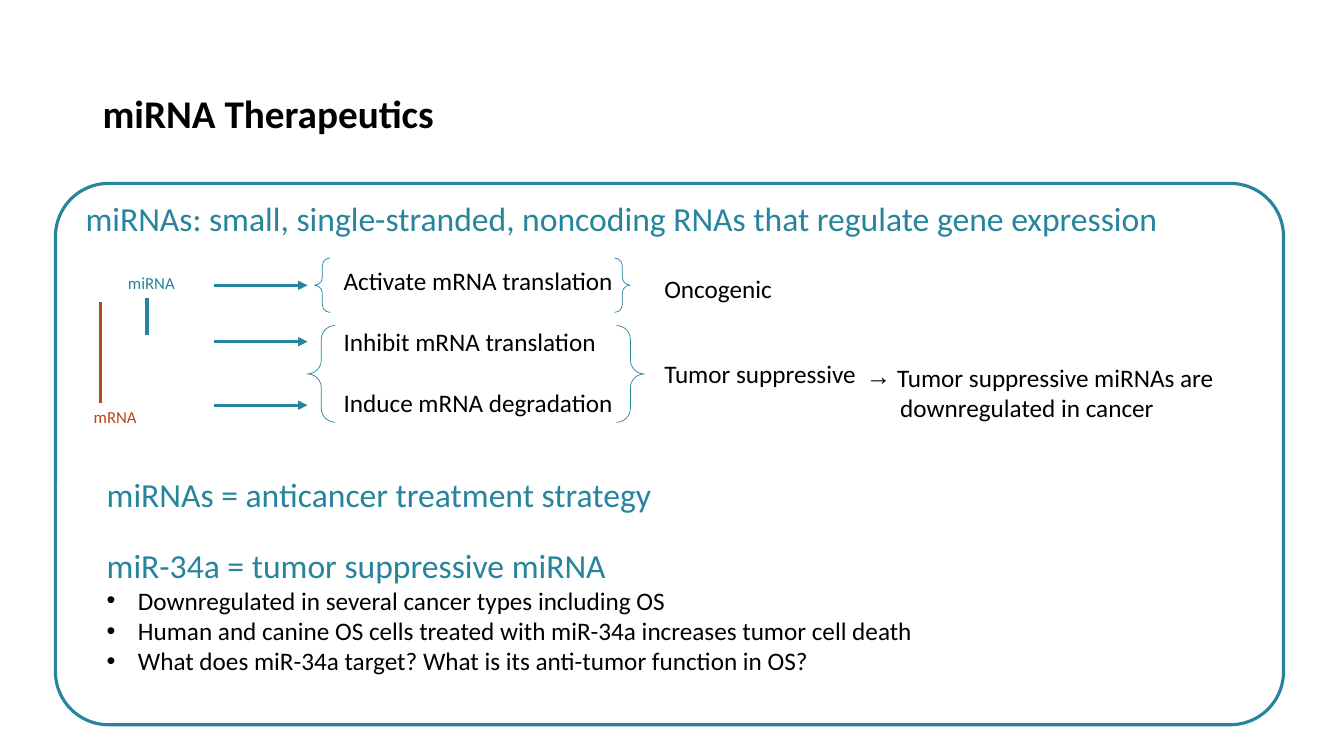
from dataclasses import dataclass

from lxml.etree import SubElement
from pptx import Presentation
from pptx.dml.color import RGBColor
from pptx.enum.shapes import MSO_CONNECTOR, MSO_SHAPE
from pptx.enum.text import MSO_ANCHOR
from pptx.oxml.ns import qn
from pptx.util import Inches, Pt

FONT = "Calibri"
TEAL = "26859D"
RUST = "B74919"
BLACK = "000000"
WHITE = "FFFFFF"
BLANK_LINE = 22
HANGING = 0.31


@dataclass
class Line:
    text: str
    size: float = 18
    color: str = BLACK
    bold: bool = False
    bullet: str = ""
    indent: float = 0
    space_before: float = 0
    line_spacing: float = 1.0


@dataclass
class TextBlock:
    left: float
    top: float
    width: float
    height: float
    lines: list[Line]
    anchor: MSO_ANCHOR = MSO_ANCHOR.TOP


@dataclass
class Outline:
    kind: MSO_SHAPE
    left: float
    top: float
    width: float
    height: float
    adjustment: float
    line_width: float
    fill: str = ""


def rgb(color: str) -> RGBColor:
    return RGBColor.from_string(color)


def set_indent(paragraph, line: Line) -> None:
    properties = paragraph._p.get_or_add_pPr()
    if line.bullet:
        properties.set("marL", str(Inches(HANGING)))
        properties.set("indent", str(-Inches(HANGING)))
        SubElement(properties, qn("a:buFont")).set("typeface", "Arial")
        SubElement(properties, qn("a:buChar")).set("char", line.bullet)
    elif line.indent:
        properties.set("marL", str(Inches(line.indent)))
        properties.set("indent", "0")


def add_text(slide, block: TextBlock) -> None:
    box = slide.shapes.add_textbox(
        Inches(block.left), Inches(block.top), Inches(block.width), Inches(block.height)
    )
    frame = box.text_frame
    frame.word_wrap = True
    frame.vertical_anchor = block.anchor
    for index, line in enumerate(block.lines):
        paragraph = frame.add_paragraph() if index else frame.paragraphs[0]
        paragraph.text = line.text
        set_indent(paragraph, line)
        paragraph.line_spacing = line.line_spacing
        if line.space_before:
            paragraph.space_before = Pt(line.space_before)
        font = paragraph.font
        font.name = FONT
        font.size = Pt(line.size)
        font.bold = line.bold
        font.color.rgb = rgb(line.color)


def add_outline(slide, outline: Outline) -> None:
    shape = slide.shapes.add_shape(
        outline.kind,
        Inches(outline.left),
        Inches(outline.top),
        Inches(outline.width),
        Inches(outline.height),
    )
    shape.adjustments[0] = outline.adjustment
    shape.shadow.inherit = False
    if outline.fill:
        shape.fill.solid()
        shape.fill.fore_color.rgb = rgb(outline.fill)
    else:
        shape.fill.background()
    shape.line.color.rgb = rgb(TEAL)
    shape.line.width = Pt(outline.line_width)


def add_line(slide, start: tuple[float, float], end: tuple[float, float],
             width: float, arrow: bool = False) -> None:
    connector = slide.shapes.add_connector(
        MSO_CONNECTOR.STRAIGHT, *(Inches(value) for value in (*start, *end))
    )
    connector.line.color.rgb = rgb(TEAL)
    connector.line.width = Pt(width)
    if arrow:
        SubElement(connector.line._get_or_add_ln(), qn("a:tailEnd")).set("type", "triangle")
    SubElement(connector._element.spPr, qn("a:effectLst"))


def bezier_point(points: list[tuple[float, float]], t: float) -> tuple[float, float]:
    weights = ((1 - t) ** 3, 3 * t * (1 - t) ** 2, 3 * t**2 * (1 - t), t**3)
    x, y = (sum(w * p[axis] for w, p in zip(weights, points)) for axis in (0, 1))
    return x, y


def add_mrna_strand(slide, controls: list[tuple[float, float]], steps: int = 16) -> None:
    """Draw a chain of cubic curves as one open, finely stepped outline."""
    curve = [
        bezier_point(controls[first:first + 4], step / steps)
        for first in range(0, len(controls) - 1, 3)
        for step in range(1, steps + 1)
    ]
    builder = slide.shapes.build_freeform(*controls[0], scale=Inches(1))
    builder.add_line_segments(curve, close=False)
    strand = builder.convert_to_shape()
    strand.shadow.inherit = False
    strand.fill.background()
    strand.line.color.rgb = rgb(RUST)
    strand.line.width = Pt(2.25)


PANEL = Outline(MSO_SHAPE.ROUNDED_RECTANGLE, 0.55, 1.82, 12.18, 5.37, 0.098, 2.25, WHITE)
BRACES = [
    Outline(MSO_SHAPE.DOUBLE_BRACE, 3.05, 3.23, 3.34, 0.96, 0.143, 0.5),
    Outline(MSO_SHAPE.DOUBLE_BRACE, 3.12, 2.56, 3.13, 0.54, 0.143, 0.5),
]
STRAND = [
    (0.96, 2.76), (1.17, 2.87), (1.38, 2.99), (1.39, 3.14), (1.4, 3.29),
    (1.03, 3.49), (1.02, 3.64), (1.02, 3.78), (1.26, 3.93), (1.35, 4.02),
]
ARROW_HEIGHTS = (2.83, 3.39, 4.02)
TEXTS = [
    TextBlock(0.92, 0.69, 11.5, 0.92,
              [Line("miRNA Therapeutics", 28, bold=True, line_spacing=0.9)],
              MSO_ANCHOR.MIDDLE),
    TextBlock(0.75, 1.91, 11.84, 0.5, [
        Line("miRNAs: small, single-stranded, noncoding RNAs that regulate gene expression",
             24, TEAL),
    ]),
    TextBlock(3.31, 2.58, 3.71, 1.62, [
        Line("Activate mRNA translation"),
        Line("Inhibit mRNA translation", space_before=BLANK_LINE),
        Line("Induce mRNA degradation", space_before=BLANK_LINE),
    ]),
    TextBlock(6.49, 3.51, 2.39, 0.4, [Line("Tumor suppressive")]),
    TextBlock(6.49, 2.66, 3.71, 0.4, [Line("Oncogenic")]),
    TextBlock(8.49, 3.54, 4.23, 0.71, [
        Line("Tumor suppressive miRNAs are", bullet="→"),
        Line("downregulated in cancer", indent=0.34),
    ]),
    TextBlock(0.96, 4.65, 10.89, 2.42, [
        Line("miRNAs = anticancer treatment strategy", 24, TEAL),
        Line("miR-34a = tumor suppressive miRNA", 24, TEAL, space_before=BLANK_LINE),
        Line("Downregulated in several cancer types including OS", bullet="•"),
        Line("Human and canine OS cells treated with miR-34a increases tumor cell death",
             bullet="•"),
        Line("What does miR-34a target? What is its anti-tumor function in OS?", bullet="•"),
    ]),
    TextBlock(0.83, 3.99, 0.89, 0.3, [Line("mRNA", 12, RUST)]),
    TextBlock(1.17, 2.66, 0.99, 0.3, [Line("miRNA", 12, TEAL)]),
]


def main() -> None:
    presentation = Presentation()
    presentation.slide_width = Inches(13.33)
    presentation.slide_height = Inches(7.5)
    slide = presentation.slides.add_slide(presentation.slide_layouts[6])

    add_outline(slide, PANEL)
    add_mrna_strand(slide, STRAND)
    add_line(slide, (1.46, 2.96), (1.46, 3.32), 3)
    for height in ARROW_HEIGHTS:
        add_line(slide, (2.12, height), (3.05, height), 2.25, arrow=True)
    for brace in BRACES:
        add_outline(slide, brace)
    for block in TEXTS:
        add_text(slide, block)

    presentation.save("out.pptx")


if __name__ == "__main__":
    main()
